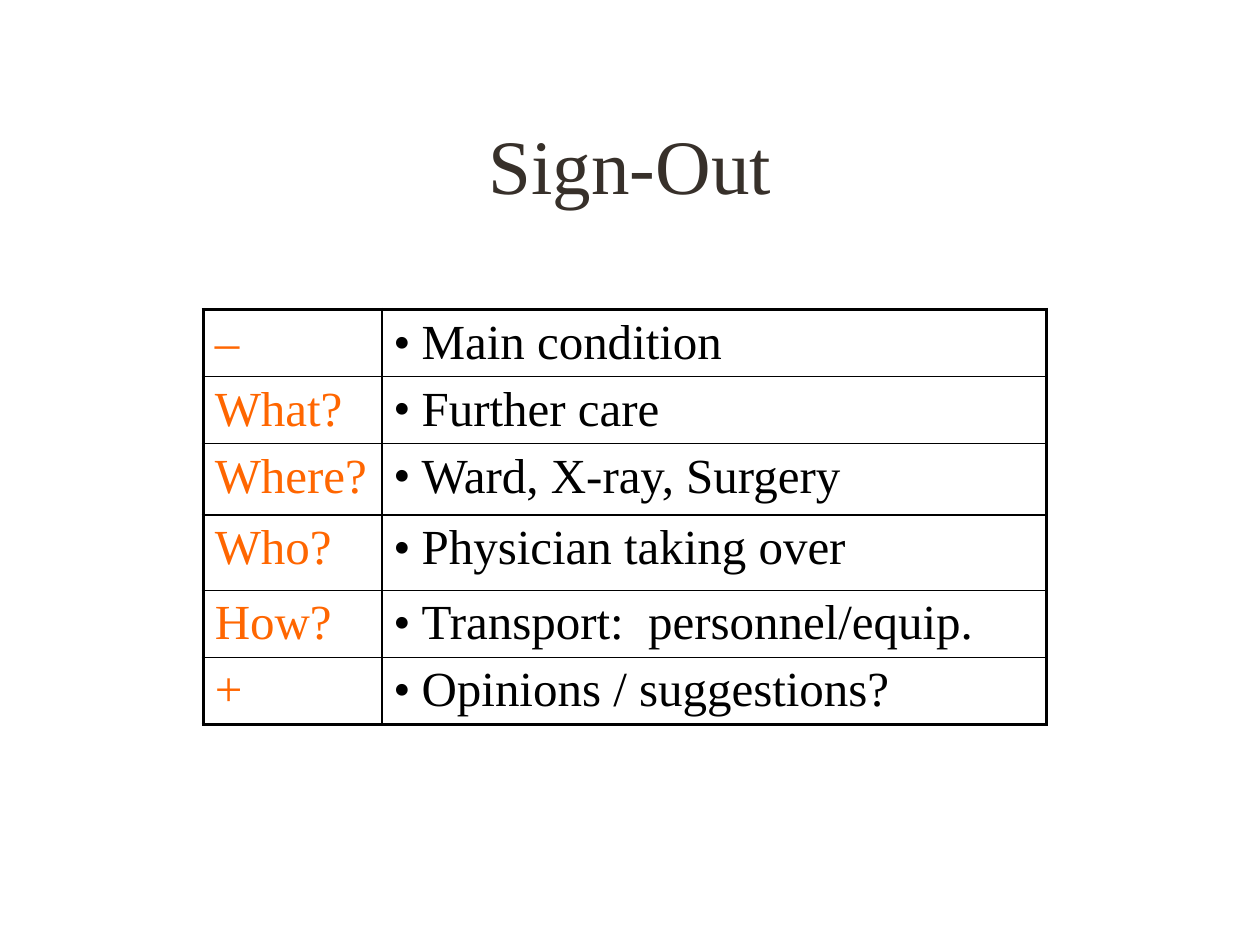
"""Build the Sign-Out handover slide with its question table."""
from dataclasses import dataclass

from lxml import etree
from pptx import Presentation
from pptx.dml.color import RGBColor
from pptx.enum import text
from pptx.oxml import ns
from pptx.util import Cm, Pt


@dataclass(frozen=True)
class Theme:
    font: str = "Times New Roman"
    title_color: str = "37302A"
    question_color: str = "FF6600"
    answer_color: str = "000000"
    border_color: str = "000000"
    title_size: float = 44
    table_size: float = 28
    outer_border: float = 2.25
    inner_border: float = 1


theme = Theme()


def format_runs(paragraph, size, color):
    for run in paragraph.runs:
        run.font.name = theme.font
        run.font.size = Pt(size)
        run.font.color.rgb = RGBColor.from_string(color)


def add_border(cell, side, width):
    properties = cell._tc.get_or_add_tcPr()
    line = etree.SubElement(properties, ns.qn(f"a:ln{side}"), w=str(Pt(width)))
    fill = etree.SubElement(line, ns.qn("a:solidFill"))
    etree.SubElement(fill, ns.qn("a:srgbClr"), val=theme.border_color)


presentation = Presentation()
presentation.slide_width, presentation.slide_height = Cm(25.4), Cm(19.05)
slide = presentation.slides.add_slide(presentation.slide_layouts[5])

title = slide.shapes.title
title.left, title.top, title.width, title.height = Cm(1.9), Cm(1.7), Cm(21.6), Cm(3.18)
title.text_frame.text = "Sign-Out"
title.text_frame.vertical_anchor = text.MSO_ANCHOR.MIDDLE
title.text_frame.paragraphs[0].alignment = text.PP_ALIGN.CENTER
format_runs(title.text_frame.paragraphs[0], theme.title_size, theme.title_color)

handover = [
    ("–", "Main condition", 1.35),
    ("What?", "Further care", 1.35),
    ("Where?", "Ward, X-ray, Surgery", 1.44),
    ("Who?", "Physician taking over", 1.52),
    ("How?", "Transport:  personnel/equip.", 1.35),
    ("+", "Opinions / suggestions?", 1.35),
]
column_widths = [3.6, 13.4]
column_colors = [theme.question_color, theme.answer_color]
last_row, last_column = len(handover) - 1, len(column_widths) - 1

table = slide.shapes.add_table(
    len(handover), len(column_widths), Cm(4.1), Cm(6.24),
    Cm(sum(column_widths)), Cm(sum(height for _, _, height in handover)),
).table
table.first_row = table.horz_banding = False
for column, width in zip(table.columns, column_widths):
    column.width = Cm(width)

for row_index, (question, answer, height) in enumerate(handover):
    table.rows[row_index].height = Cm(height)
    for column_index, wording in enumerate((question, answer)):
        cell = table.cell(row_index, column_index)
        cell.margin_left = cell.margin_right = Cm(0.23)
        cell.margin_top = cell.margin_bottom = Cm(0.12)
        outer_sides = {
            "L": column_index == 0,
            "R": column_index == last_column,
            "T": row_index == 0,
            "B": row_index == last_row,
        }
        for side, is_outer in outer_sides.items():
            add_border(cell, side, theme.outer_border if is_outer else theme.inner_border)
        cell.fill.background()

        cell.text_frame.text = wording
        paragraph = cell.text_frame.paragraphs[0]
        paragraph.space_before = Pt(theme.table_size * 0.2)
        format_runs(paragraph, theme.table_size, column_colors[column_index])
        if column_index == last_column:
            properties = paragraph._p.get_or_add_pPr()
            properties.set("marL", str(Cm(0.57)))
            properties.set("indent", str(Cm(-0.57)))
            etree.SubElement(properties, ns.qn("a:buFont"), typeface=theme.font)
            etree.SubElement(properties, ns.qn("a:buChar"), char="•")

presentation.save("out.pptx")
